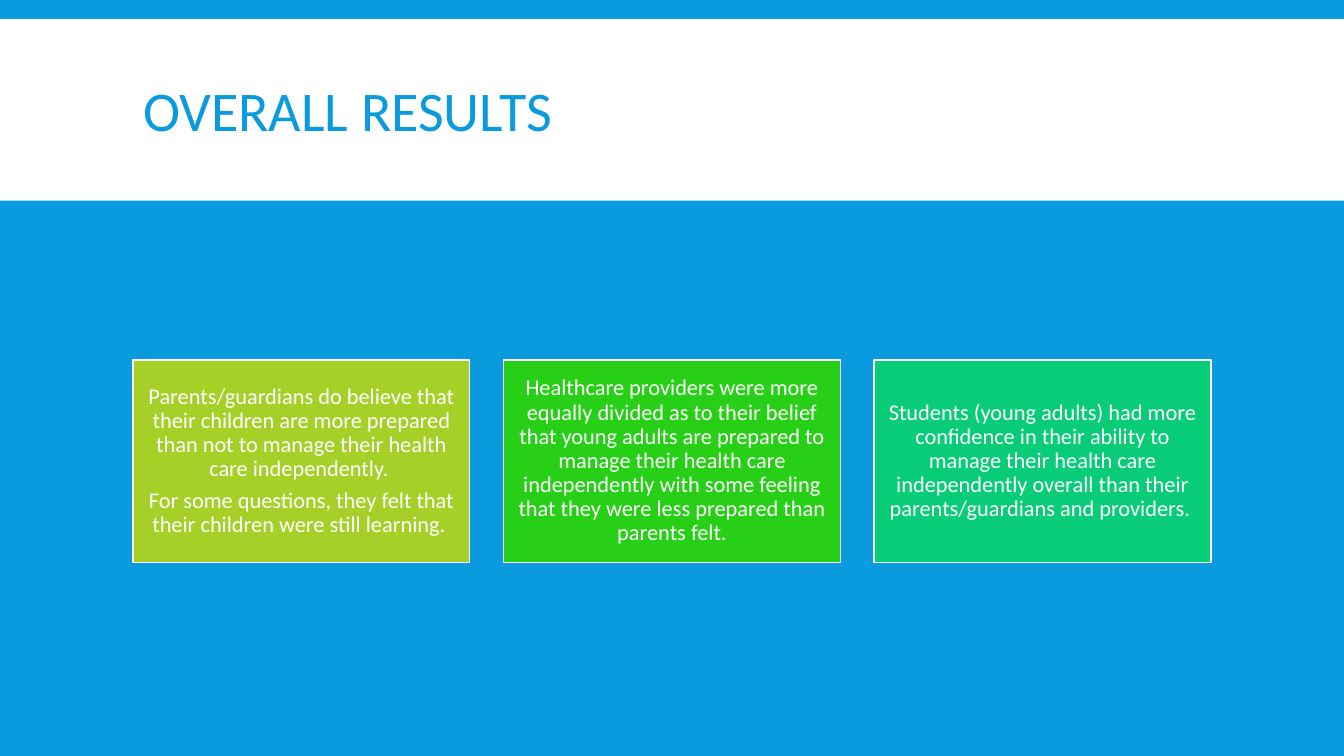
import dataclasses

import pptx
import pptx.dml.color
import pptx.enum.shapes
import pptx.enum.text
import pptx.util


@dataclasses.dataclass(frozen=True)
class Theme:
    blue: str = "099BDD"
    white: str = "FFFFFF"
    cards: tuple = ("A5D028", "27CF17", "08CC78")
    font: str = "Calibri"
    title_size: int = 40
    card_size: int = 16


THEME = Theme()
WIDTH, HEIGHT = 13.33, 7.5

# Card grid, in inches
MARGIN, CARD_TOP = 1.32, 3.57
CARD_WIDTH, CARD_HEIGHT, GAP = 3.34, 2.01, 0.335
INSET = 0.07

FINDINGS = [
    [
        "Parents/guardians do believe that their children are more prepared "
        "than not to manage their health care independently. ",
        "For some questions, they felt that their children were still learning. ",
    ],
    [
        "Healthcare providers were more equally divided as to their belief that "
        "young adults are prepared to manage their health care independently "
        "with some feeling that they were less prepared than parents felt.",
    ],
    [
        "Students (young adults) had more confidence in their ability to manage "
        "their health care independently overall than their parents/guardians "
        "and providers. ",
    ],
]


def color(code):
    return pptx.dml.color.RGBColor.from_string(code)


def place(*inches):
    return [pptx.util.Inches(value) for value in inches]


def format_text(frame, size, code, align, line_spacing, space_after=0):
    frame.word_wrap = True
    frame.auto_size = pptx.enum.text.MSO_AUTO_SIZE.NONE
    frame.vertical_anchor = pptx.enum.text.MSO_ANCHOR.MIDDLE
    for para in frame.paragraphs:
        para.alignment = align
        para.line_spacing = line_spacing
        para.space_after = pptx.util.Pt(space_after)
        for span in para.runs:
            span.font.name = THEME.font
            span.font.size = pptx.util.Pt(size)
            span.font.color.rgb = color(code)


def add_box(page, left, top, width, height, fill):
    box = page.shapes.add_shape(
        pptx.enum.shapes.MSO_SHAPE.RECTANGLE, *place(left, top, width, height))
    box.shadow.inherit = False
    box.fill.solid()
    box.fill.fore_color.rgb = color(fill)
    return box


def add_title(page, text):
    # White band behind the title
    band = add_box(page, 0, 0.19, WIDTH, 1.8, THEME.white)
    band.line.fill.background()
    title = page.shapes.title
    title.element.addprevious(band.element)

    title.left, title.top, title.width, title.height = place(
        MARGIN, 0.31, 10.7, 1.65)
    title.text_frame.text = text
    format_text(title.text_frame, THEME.title_size, THEME.blue,
                pptx.enum.text.PP_ALIGN.LEFT, 0.85)


def add_card(page, column, paragraphs, fill):
    left = MARGIN + column * (CARD_WIDTH + GAP)
    card = add_box(page, left, CARD_TOP, CARD_WIDTH, CARD_HEIGHT, fill)
    card.line.color.rgb = color(THEME.white)
    card.line.width = pptx.util.Pt(1)

    frame = card.text_frame
    frame.margin_left = frame.margin_right = pptx.util.Inches(INSET)
    frame.margin_top = frame.margin_bottom = pptx.util.Inches(INSET)
    frame.text = "\n".join(paragraphs)
    format_text(frame, THEME.card_size, THEME.white,
                pptx.enum.text.PP_ALIGN.CENTER, 0.9,
                space_after=0.35 * THEME.card_size)


def main():
    deck = pptx.Presentation()
    deck.slide_width, deck.slide_height = place(WIDTH, HEIGHT)
    page = deck.slides.add_slide(deck.slide_layouts.get_by_name("Title Only"))
    page.background.fill.solid()
    page.background.fill.fore_color.rgb = color(THEME.blue)

    add_title(page, "OVERALL RESULTS")

    # One card per respondent group
    for column, (paragraphs, fill) in enumerate(zip(FINDINGS, THEME.cards)):
        add_card(page, column, paragraphs, fill)

    deck.save("out.pptx")


if __name__ == "__main__":
    main()
